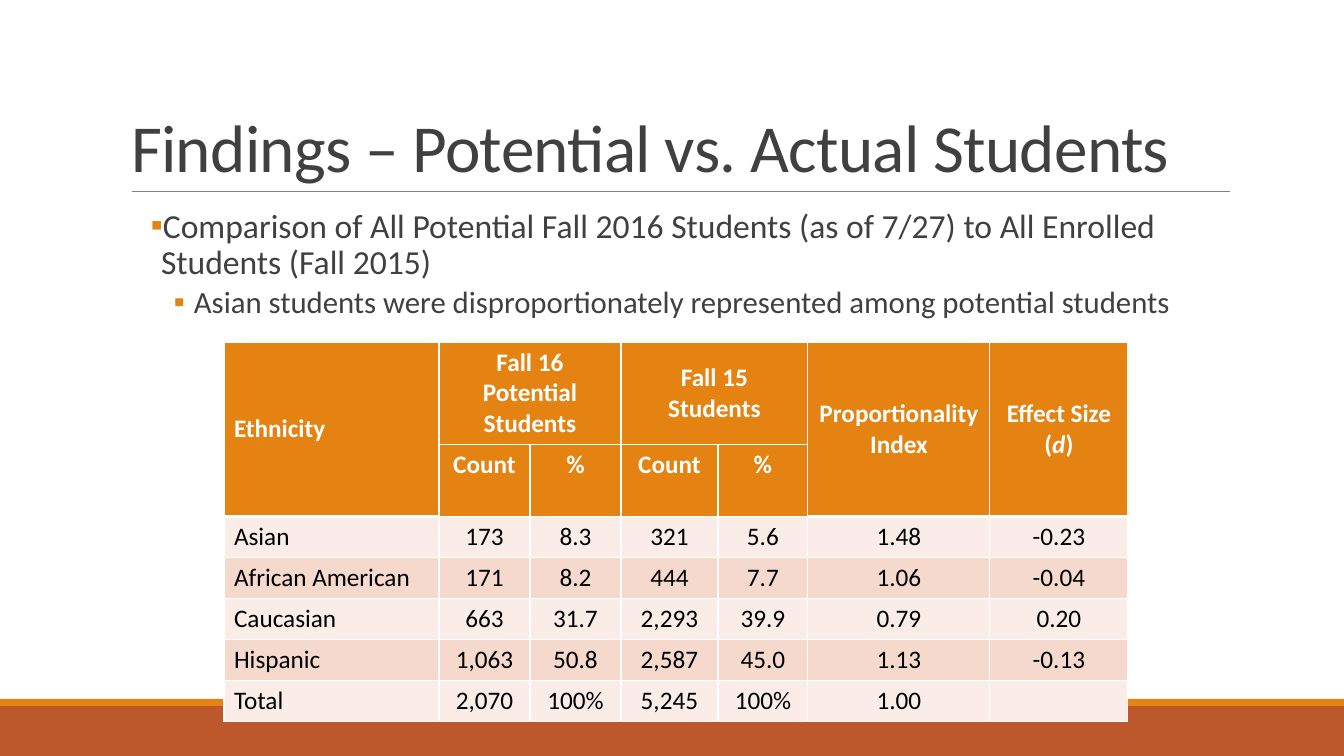
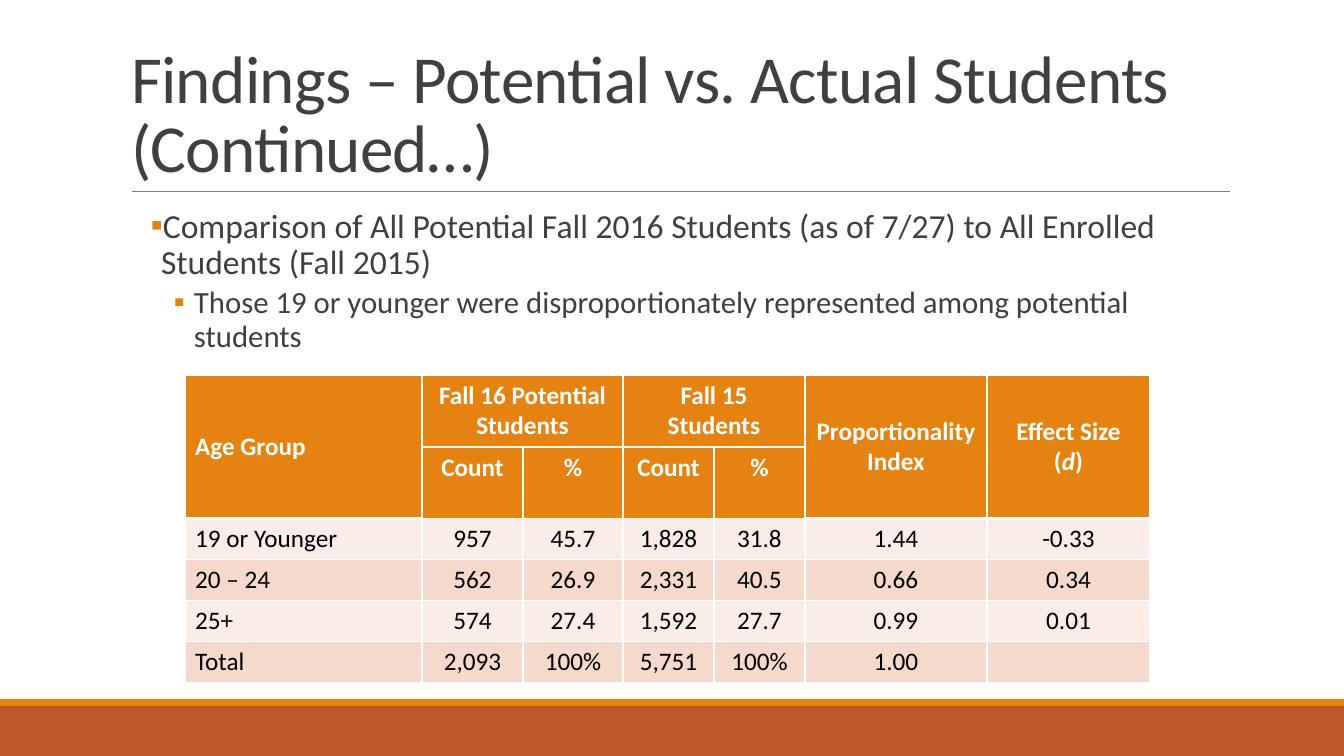
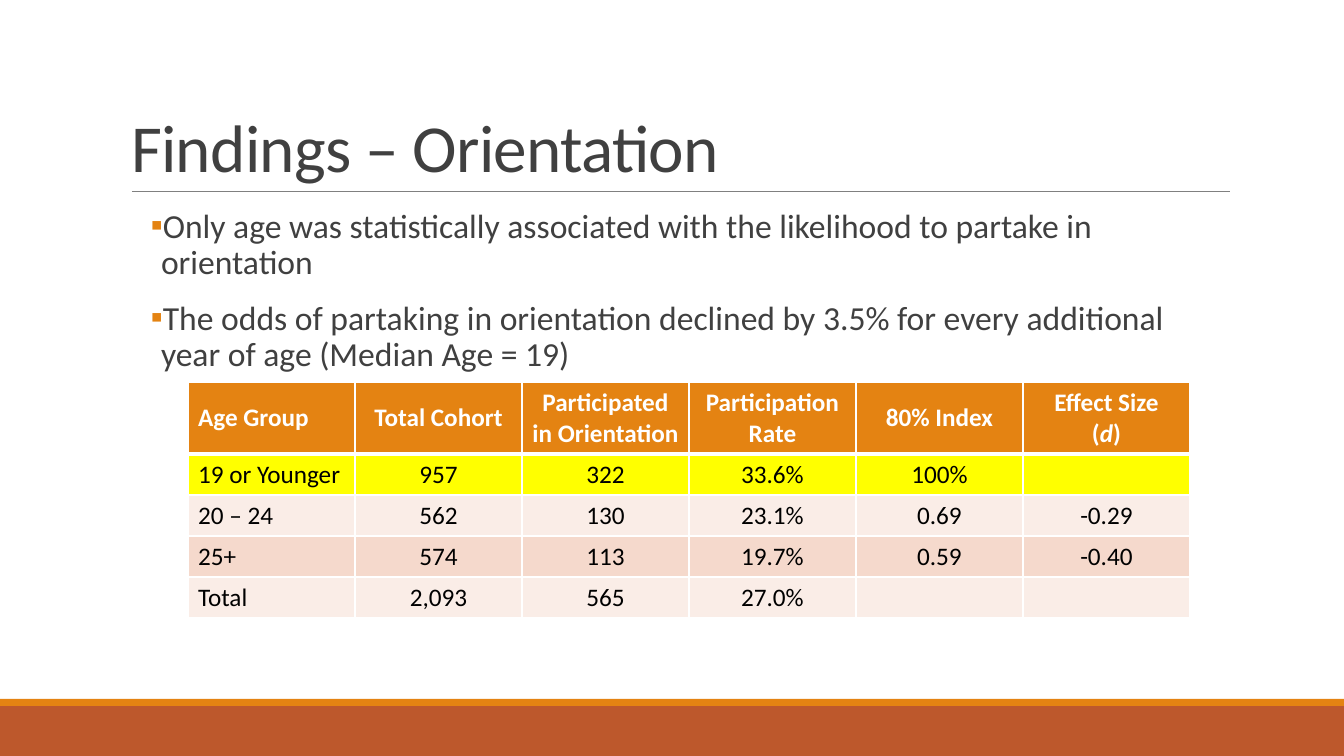
from dataclasses import dataclass

from lxml import etree
from pptx import Presentation
from pptx.dml.color import RGBColor
from pptx.enum.shapes import MSO_CONNECTOR, MSO_SHAPE
from pptx.enum.text import MSO_ANCHOR, MSO_AUTO_SIZE, PP_ALIGN
from pptx.oxml.ns import qn
from pptx.util import Pt

LEFT, CENTER = PP_ALIGN.LEFT, PP_ALIGN.CENTER
TOP, MIDDLE, BOTTOM = MSO_ANCHOR.TOP, MSO_ANCHOR.MIDDLE, MSO_ANCHOR.BOTTOM
RECT, STRAIGHT = MSO_SHAPE.RECTANGLE, MSO_CONNECTOR.STRAIGHT
NO_AUTOFIT = MSO_AUTO_SIZE.NONE


@dataclass(frozen=True)
class Theme:
    font: str = "Calibri"
    text: str = "404040"
    accent: str = "E48312"
    footer: str = "BD582C"
    rule: str = "808080"
    white: str = "FFFFFF"
    black: str = "000000"
    highlight: str = "FFFF00"
    bands: tuple = ("FAEDE7", "F5D9CC")
    title_size: int = 48
    cell_size: int = 18


THEME = Theme()

# Geometry in px
EMU_PER_PX = 914400 / 100.8
SLIDE_W, SLIDE_H = 1344, 756
TITLE_BOX = (121, 31, 1109, 160)
BODY_BOX = (121, 204, 1109, 444)
BANDS = [(0, 706, SLIDE_W, 50, THEME.footer), (0, 699, SLIDE_W, 7, THEME.accent)]
RULE = (132, 191, 1230, 191)
ROW_H = 41

# Bullet levels: size, margin and indent in px, space before and after in pt
LEVELS = [
    dict(size=24, margin=40, indent=-10, before=12, after=2),
    dict(size=22, margin=73, indent=-20, before=2, after=4),
]

# Content: bullets are (level, text); *x* is italic; "\n" starts a paragraph;
# each header is (text, sub-headers)
COMPARISON = ("Comparison of All Potential Fall 2016 Students (as of 7/27) "
              "to All Enrolled Students (Fall 2015)")
COUNTS = ["Count", "%"]

SLIDES = [
    dict(
        title="Findings – Potential vs. Actual Students",
        bullets=[
            (0, COMPARISON),
            (1, "Asian students were disproportionately represented among potential students"),
        ],
        at=(224, 342), cols=[215, 91, 91, 97, 90, 182, 138], head_h=[102, 72],
        head=[
            ("Ethnicity", []),
            ("Fall 16 Potential Students", COUNTS),
            ("Fall 15\nStudents", COUNTS),
            ("Proportionality Index", []),
            ("Effect Size (*d*)", []),
        ],
        rows=[
            ("Asian", "173", "8.3", "321", "5.6", "1.48", "-0.23"),
            ("African American", "171", "8.2", "444", "7.7", "1.06", "-0.04"),
            ("Caucasian", "663", "31.7", "2,293", "39.9", "0.79", "0.20"),
            ("Hispanic", "1,063", "50.8", "2,587", "45.0", "1.13", "-0.13"),
            ("Total", "2,070", "100%", "5,245", "100%", "1.00", ""),
        ],
        highlighted=0,
    ),
    dict(
        title="Findings – Potential vs. Actual Students (Continued…)",
        bullets=[
            (0, COMPARISON),
            (1, "Those 19 or younger were disproportionately represented among potential students"),
        ],
        at=(185, 375), cols=[237, 101, 100, 91, 91, 182, 163], head_h=[72, 71],
        head=[
            ("Age Group", []),
            ("Fall 16 Potential Students", COUNTS),
            ("Fall 15 Students", COUNTS),
            ("Proportionality Index", []),
            ("Effect Size\n(*d*)", []),
        ],
        rows=[
            ("19 or Younger", "957", "45.7", "1,828", "31.8", "1.44", "-0.33"),
            ("20 – 24", "562", "26.9", "2,331", "40.5", "0.66", "0.34"),
            ("25+", "574", "27.4", "1,592", "27.7", "0.99", "0.01"),
            ("Total", "2,093", "100%", "5,751", "100%", "1.00", ""),
        ],
        highlighted=0,
    ),
    dict(
        title="Findings – Orientation",
        bullets=[
            (0, "Only age was statistically associated with the likelihood to partake in orientation"),
            (0, "The odds of partaking in orientation declined by 3.5% for every "
                "additional year of age (Median Age = 19)"),
        ],
        at=(188, 382), cols=[167] * 6, head_h=[72],
        head=[
            ("Age Group", []),
            ("Total Cohort", []),
            ("Participated in Orientation", []),
            ("Participation Rate", []),
            ("80% Index", []),
            ("Effect Size\n(*d*)", []),
        ],
        rows=[
            ("19 or Younger", "957", "322", "33.6%", "100%", ""),
            ("20 – 24", "562", "130", "23.1%", "0.69", "-0.29"),
            ("25+", "574", "113", "19.7%", "0.59", "-0.40"),
            ("Total", "2,093", "565", "27.0%", "", ""),
        ],
        highlighted=1,
    ),
]


def px(n):
    return round(n * EMU_PER_PX)


def rgb(color):
    return RGBColor.from_string(color)


def sub(parent, tag, **attrs):
    return etree.SubElement(parent, qn(tag), attrs)


def write(p, text, size=THEME.cell_size, color=THEME.text, bold=False,
          align=LEFT, line=1.0, before=0, after=0, tracking=None):
    p.alignment, p.line_spacing = align, line
    p.space_before, p.space_after = Pt(before), Pt(after)
    for i, part in enumerate(text.split("*")):
        if not part:
            continue
        r = p.add_run()
        r.text = part
        r.font.name, r.font.size = THEME.font, Pt(size)
        r.font.bold, r.font.italic = bold, i % 2 == 1
        r.font.color.rgb = rgb(color)
        if tracking:
            r.font._element.set("spc", str(tracking))


def add_bullet(p, margin, indent):
    pPr = p._p.get_or_add_pPr()
    pPr.set("marL", str(px(margin)))
    pPr.set("indent", str(px(indent)))
    sub(sub(pPr, "a:buClr"), "a:srgbClr", val=THEME.accent)
    sub(pPr, "a:buFont", typeface=THEME.font)
    sub(pPr, "a:buChar", char="▪")


def place(ph, box, anchor):
    ph.left, ph.top, ph.width, ph.height = map(px, box)
    tf = ph.text_frame
    tf.word_wrap, tf.auto_size, tf.vertical_anchor = True, NO_AUTOFIT, anchor
    return tf


def decorate_layout(layout, s):
    """Draw the bands and the title rule on s, then move them to the layout."""
    parts = []
    for *box, color in BANDS:
        band = s.shapes.add_shape(RECT, *map(px, box))
        band.shadow.inherit = False
        band.fill.solid()
        band.fill.fore_color.rgb = rgb(color)
        band.line.fill.background()
        parts.append(band)
    rule = s.shapes.add_connector(STRAIGHT, *map(px, RULE))
    rule.line.color.rgb, rule.line.width = rgb(THEME.rule), Pt(0.5)
    sub(rule.element.spPr, "a:effectLst")
    for part in parts + [rule]:
        layout.shapes.element.append(part.element)


def style_cell(cell, fill, anchor=MIDDLE, bottom=1):
    tcPr = cell._tc.get_or_add_tcPr()
    for side, width in (("L", 1), ("R", 1), ("T", 1), ("B", bottom)):
        ln = sub(tcPr, "a:ln" + side, w=str(Pt(width)))
        sub(sub(ln, "a:solidFill"), "a:srgbClr", val=THEME.white)
    cell.fill.solid()
    cell.fill.fore_color.rgb = rgb(fill)
    cell.vertical_anchor = anchor


def fill_cell(cell, text, **fmt):
    tf = cell.text_frame
    for i, line in enumerate(text.split("\n")):
        write(tf.add_paragraph() if i else tf.paragraphs[0], line, **fmt)


def add_header(table, head, depth):
    col = 0
    for text, subs in head:
        align = CENTER if col else LEFT
        width = max(1, len(subs))
        for row in range(depth):
            for c in range(col, col + width):
                style_cell(table.cell(row, c), THEME.accent,
                           TOP if subs and row else MIDDLE, 1 if subs else 3)
        top = table.cell(0, col)
        end = table.cell(0 if subs else depth - 1, col + width - 1)
        if subs or depth > 1:
            top.merge(end)
        fmt = dict(color=THEME.white, bold=True, align=align)
        fill_cell(top, text, **fmt)
        for i, label in enumerate(subs):
            fill_cell(table.cell(1, col + i), label, **fmt)
        col += width


def add_data_table(s, data):
    cols, rows, head_h = data["cols"], data["rows"], data["head_h"]
    heights = head_h + [ROW_H] * len(rows)
    table = s.shapes.add_table(
        len(heights), len(cols), *map(px, data["at"]),
        px(sum(cols)), px(sum(heights))).table
    for column, width in zip(table.columns, cols):
        column.width = px(width)
    for row, height in zip(table.rows, heights):
        row.height = px(height)
    add_header(table, data["head"], len(head_h))
    marked = data["highlighted"]
    for i, values in enumerate(rows):
        fill = THEME.highlight if i < marked else THEME.bands[(i - marked) % 2]
        for c, value in enumerate(values):
            cell = table.cell(len(head_h) + i, c)
            style_cell(cell, fill)
            fill_cell(cell, value, color=THEME.black, align=CENTER if c else LEFT)


def add_slide(prs, layout, data):
    s = prs.slides.add_slide(layout)
    # Title
    tf = place(s.shapes.title, TITLE_BOX, BOTTOM)
    write(tf.paragraphs[0], data["title"], size=THEME.title_size, line=0.85, tracking=-50)
    # Bullets
    tf = place(s.placeholders[1], BODY_BOX, TOP)
    tf.margin_left = tf.margin_right = 0
    for i, (level, text) in enumerate(data["bullets"]):
        p = tf.add_paragraph() if i else tf.paragraphs[0]
        p.level = level
        look = LEVELS[level]
        write(p, text, size=look["size"], line=0.9,
              before=look["before"], after=look["after"])
        add_bullet(p, look["margin"], look["indent"])
    # Table
    add_data_table(s, data)
    return s


def main():
    prs = Presentation()
    prs.slide_width, prs.slide_height = px(SLIDE_W), px(SLIDE_H)
    layout = prs.slide_layouts[1]
    slides = [add_slide(prs, layout, data) for data in SLIDES]
    decorate_layout(layout, slides[0])
    prs.save("out.pptx")


if __name__ == "__main__":
    main()
